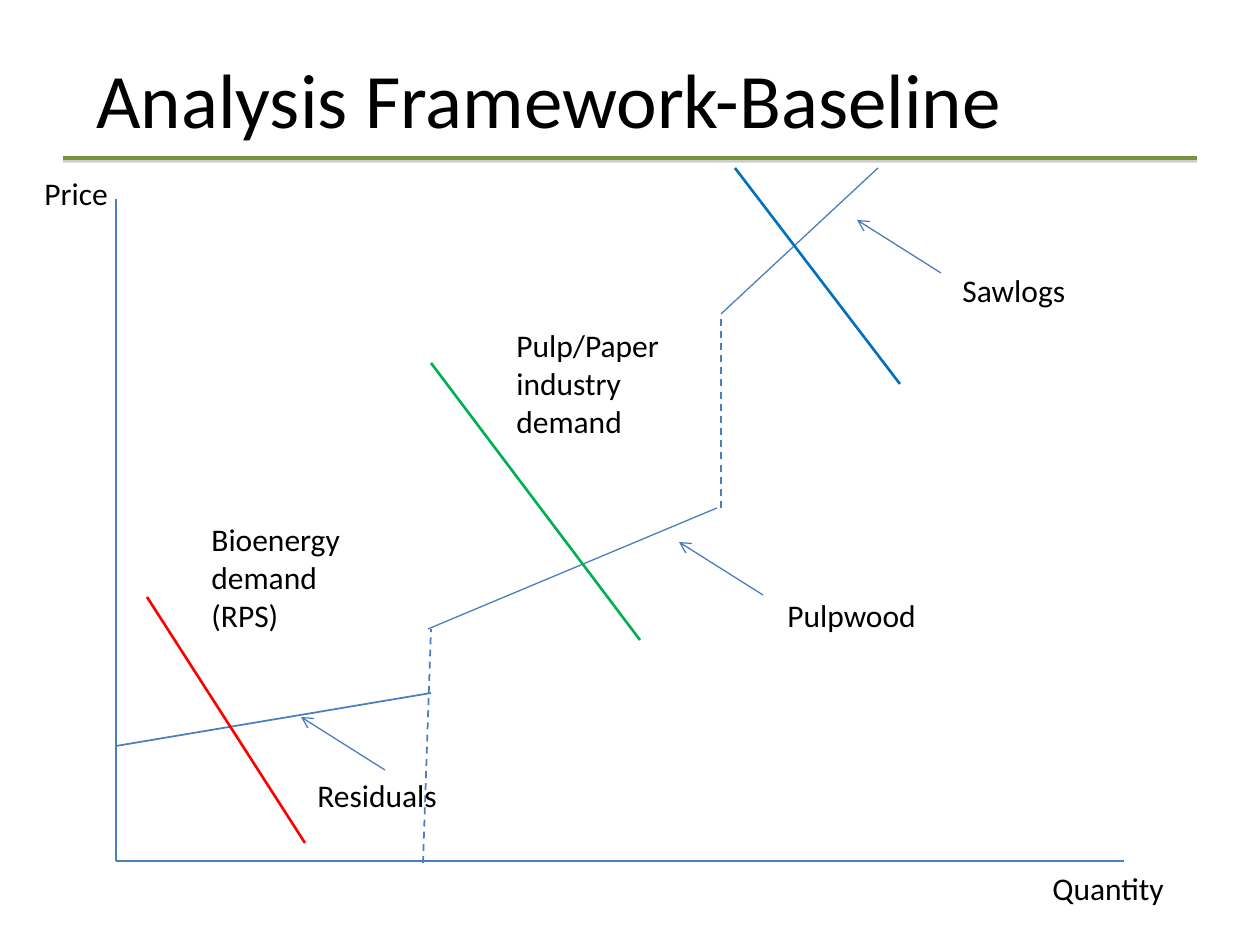
from dataclasses import dataclass

from lxml import etree
from pptx import Presentation, util as u
from pptx.dml.color import RGBColor
from pptx.enum import dml, shapes, text
from pptx.oxml.ns import qn

PX = 914400 / 126


@dataclass(frozen=True)
class Theme:
    font: str = "Calibri"
    title_size: int = 44
    label_size: int = 18
    ink: str = "000000"
    rule: str = "77933C"
    shadow: str = "808080"
    supply: str = "4B7EBC"
    sawlogs: str = "0070C0"
    pulp: str = "00B050"
    bioenergy: str = "FF0000"


THEME = Theme()

TITLE = ("Analysis Framework-Baseline", (84, 38, 1113, 120))
HEADER_RULE = (63, 158, 1197, 158)

LABELS = [  # wording, (left, top, width, height)
    ("Price", (32, 168, 105, 50)),
    ("Quantity", (1040, 863, 158, 50)),
    ("Residuals", (305, 770, 158, 50)),
    ("Pulpwood", (775, 590, 168, 50)),
    ("Sawlogs", (950, 265, 168, 50)),
    ("Bioenergy demand (RPS)", (199, 514, 158, 127)),
    ("Pulp/Paper industry demand", (504, 320, 192, 127)),
]

AXES = [(116, 199, 116, 861), (116, 861, 1124, 861)]
SUPPLY = [  # ends, width in points
    ((116, 746, 431, 693), 1),
    ((428, 629, 717, 508), 0.75),
    ((721, 314, 878, 168), 0.75),
]
SUPPLY_STEPS = [(423, 863, 431, 629), (721, 508, 721, 314)]
DEMAND = [
    ((735, 168, 900, 384), THEME.sawlogs),
    ((431, 363, 640, 640), THEME.pulp),
    ((147, 597, 305, 843), THEME.bioenergy),
]
POINTER_STARTS = [(385, 770), (763, 595), (941, 273)]
POINTER_STEP = (-84, -53)


def emu(*lengths):
    return [u.Emu(round(length * PX)) for length in lengths]


def add_line(slide, ends, color, width, dashed=False, arrow=False):
    line = slide.shapes.add_connector(shapes.MSO_CONNECTOR.STRAIGHT, *emu(*ends))
    line.line.color.rgb = RGBColor.from_string(color)
    line.line.width = u.Pt(width)
    if dashed:
        line.line.dash_style = dml.MSO_LINE.DASH
    properties = line._element.spPr
    if arrow:
        etree.SubElement(properties.find(qn("a:ln")), qn("a:tailEnd"), type="arrow")
    return etree.SubElement(properties, qn("a:effectLst"))


def add_shadow(effects):
    shadow = etree.SubElement(effects, qn("a:outerShdw"), blurRad="0",
                              dist=str(u.Pt(1.6)), dir="5400000", rotWithShape="0")
    color = etree.SubElement(shadow, qn("a:srgbClr"), val=THEME.shadow)
    etree.SubElement(color, qn("a:alpha"), val="38000")


def add_text(slide, wording, place, size, anchor=text.MSO_ANCHOR.TOP):
    frame = slide.shapes.add_textbox(*emu(*place)).text_frame
    frame.word_wrap = True
    frame.vertical_anchor = anchor
    run = frame.paragraphs[0].add_run()
    run.text = wording
    run.font.name = THEME.font
    run.font.size = u.Pt(size)
    run.font.color.rgb = RGBColor.from_string(THEME.ink)


def main():
    deck = Presentation()
    deck.slide_width, deck.slide_height = emu(1260, 945)
    slide = deck.slides.add_slide(deck.slide_layouts[6])

    add_shadow(add_line(slide, HEADER_RULE, THEME.rule, 2))
    add_text(slide, *TITLE, THEME.title_size, text.MSO_ANCHOR.MIDDLE)

    for ends in AXES:
        add_line(slide, ends, THEME.supply, 0.75)
    for ends in SUPPLY_STEPS:
        add_line(slide, ends, THEME.supply, 1, dashed=True)
    for x, y in POINTER_STARTS:
        tip = (x + POINTER_STEP[0], y + POINTER_STEP[1])
        add_line(slide, (x, y, *tip), THEME.supply, 0.75, arrow=True)
    for wording, place in LABELS:
        add_text(slide, wording, place, THEME.label_size)
    for ends, width in SUPPLY:
        add_line(slide, ends, THEME.supply, width)
    for ends, color in DEMAND:
        add_line(slide, ends, color, 1.5)

    deck.save("out.pptx")


if __name__ == "__main__":
    main()
